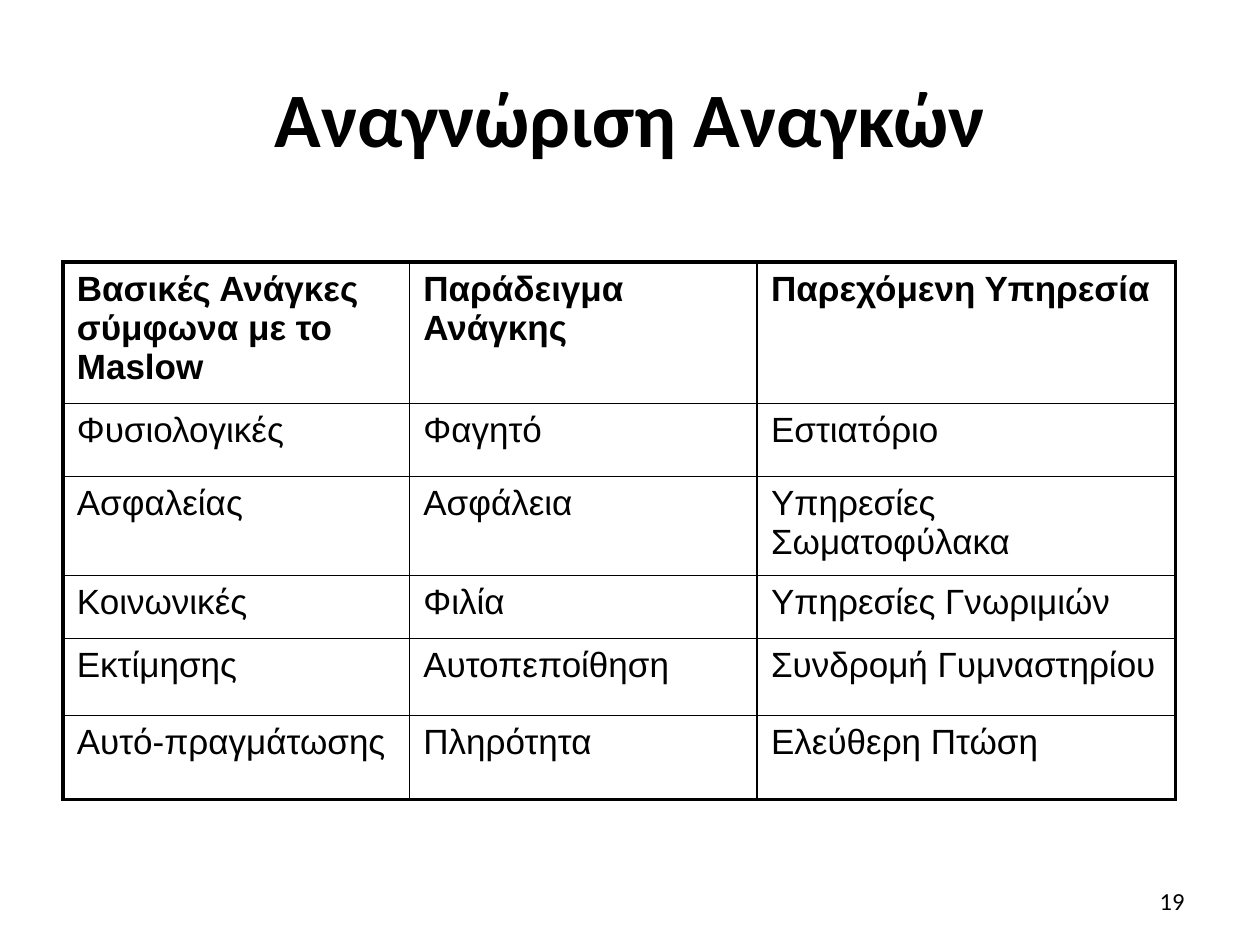
from lxml import etree
from pptx import Presentation
from pptx.dml.color import RGBColor
from pptx.enum.text import MSO_ANCHOR, PP_ALIGN
from pptx.oxml.ns import qn
from pptx.util import Inches, Pt

CENTER, RIGHT = PP_ALIGN.CENTER, PP_ALIGN.RIGHT
MIDDLE, TOP = MSO_ANCHOR.MIDDLE, MSO_ANCHOR.TOP
COLORS = {"ink": "000000", "paper": "FFFFFF"}
HEADING_FONT, TABLE_FONT = "Calibri", "Arial"
OUTER_LINE, INNER_LINE = 2.25, 1

NEEDS = [
    ("Βασικές Ανάγκες σύμφωνα με το Maslow", "Παράδειγμα Ανάγκης", "Παρεχόμενη Υπηρεσία"),
    ("Φυσιολογικές", "Φαγητό", "Εστιατόριο"),
    ("Ασφαλείας", "Ασφάλεια", "Υπηρεσίες Σωματοφύλακα"),
    ("Κοινωνικές", "Φιλία", "Υπηρεσίες Γνωριμιών"),
    ("Εκτίμησης", "Αυτοπεποίθηση", "Συνδρομή Γυμναστηρίου"),
    ("Αυτό-πραγμάτωσης", "Πληρότητα", "Ελεύθερη Πτώση"),
]
COLUMN_WIDTHS = [2.75, 2.76, 3.32]
ROW_HEIGHTS = [1.11, 0.58, 0.58, 0.5, 0.61, 0.67]


class SlideBuilder:
    def __init__(self, slide):
        self.slide = slide

    def style(self, paragraph, font_name, size, bold=False):
        for run in paragraph.runs:
            run.font.name = font_name
            run.font.size = Pt(size)
            run.font.bold = bold
            run.font.color.rgb = RGBColor.from_string(COLORS["ink"])

    def text(self, wording, left, top, width, height, size, align, bold=False):
        box = self.slide.shapes.add_textbox(
            Inches(left), Inches(top), Inches(width), Inches(height))
        frame = box.text_frame
        frame.word_wrap = True
        frame.vertical_anchor = MIDDLE
        frame.text = wording
        paragraph = frame.paragraphs[0]
        paragraph.alignment = align
        self.style(paragraph, HEADING_FONT, size, bold)

    def border(self, cell, side, points):
        properties = cell._tc.get_or_add_tcPr()
        line = etree.SubElement(properties, qn(f"a:ln{side}"), w=str(Pt(points)))
        fill = etree.SubElement(line, qn("a:solidFill"))
        etree.SubElement(fill, qn("a:srgbClr"), val=COLORS["ink"])

    def cell(self, cell, wording, outer_sides, bold):
        for side in "LRTB":
            self.border(cell, side, OUTER_LINE if side in outer_sides else INNER_LINE)
        cell.fill.solid()
        cell.fill.fore_color.rgb = RGBColor.from_string(COLORS["paper"])
        cell.margin_left = cell.margin_right = Inches(0.11)
        cell.margin_top = cell.margin_bottom = Inches(0.06)
        cell.vertical_anchor = TOP
        cell.text_frame.text = wording
        self.style(cell.text_frame.paragraphs[0], TABLE_FONT, 20, bold)

    def table(self, rows, left, top, widths, heights):
        table = self.slide.shapes.add_table(
            len(rows), len(widths), Inches(left), Inches(top),
            Inches(sum(widths)), Inches(sum(heights))).table
        table.horz_banding = False
        for column, width in zip(table.columns, widths):
            column.width = Inches(width)
        for row, height in zip(table.rows, heights):
            row.height = Inches(height)
        last_row, last_column = len(rows) - 1, len(widths) - 1
        for r, row in enumerate(rows):
            for c, wording in enumerate(row):
                # Only the sides on the table's edge get the heavy line
                edges = {"L": c == 0, "R": c == last_column, "T": r == 0, "B": r == last_row}
                outer_sides = [side for side, is_outer in edges.items() if is_outer]
                self.cell(table.cell(r, c), wording, outer_sides, bold=r == 0)


def main():
    presentation = Presentation()
    presentation.slide_width, presentation.slide_height = Inches(10), Inches(7.5)
    builder = SlideBuilder(presentation.slides.add_slide(presentation.slide_layouts[6]))

    # Page number
    builder.text("19", 7.17, 6.95, 2.33, 0.4, 14, RIGHT)
    # Needs and the services that meet them
    builder.table(NEEDS, 0.5, 2.08, COLUMN_WIDTHS, ROW_HEIGHTS)
    # Title
    builder.text("Αναγνώριση Αναγκών", 0.5, 0.3, 9, 1.25, 44, CENTER, bold=True)

    presentation.save("out.pptx")


if __name__ == "__main__":
    main()
